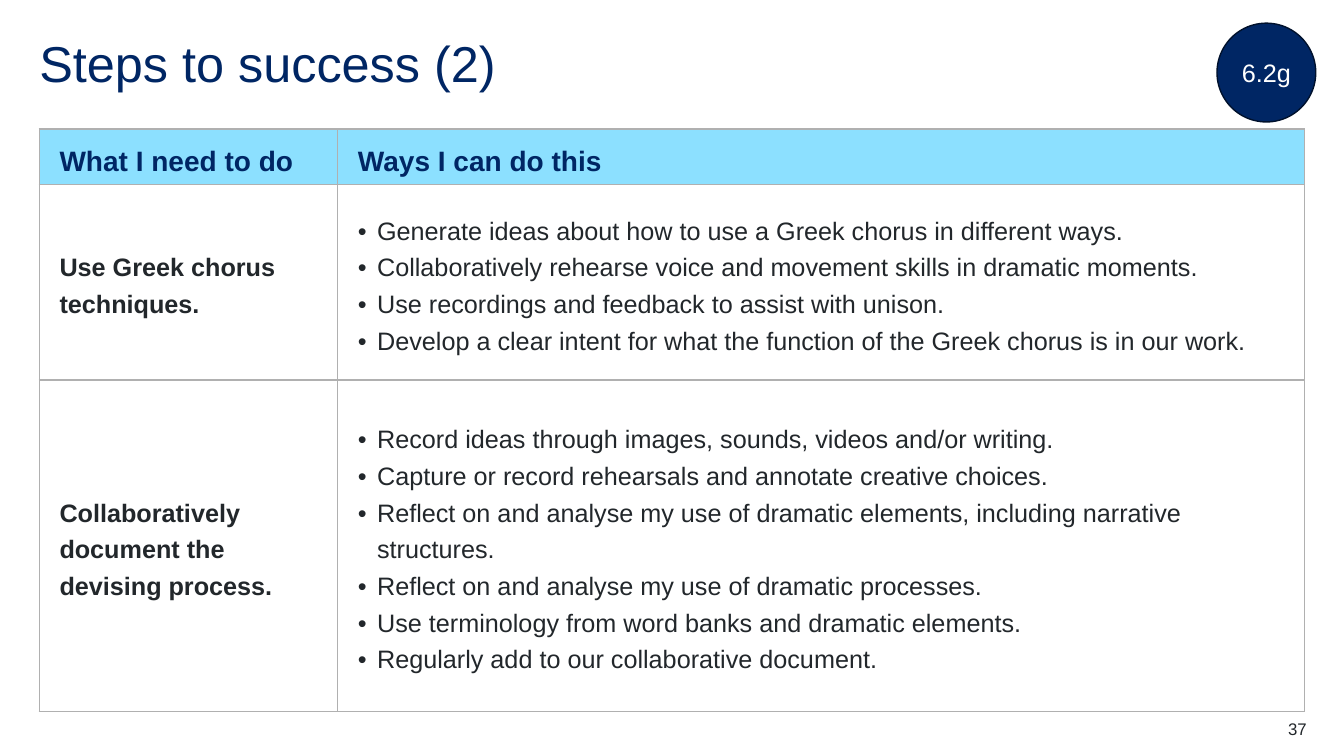
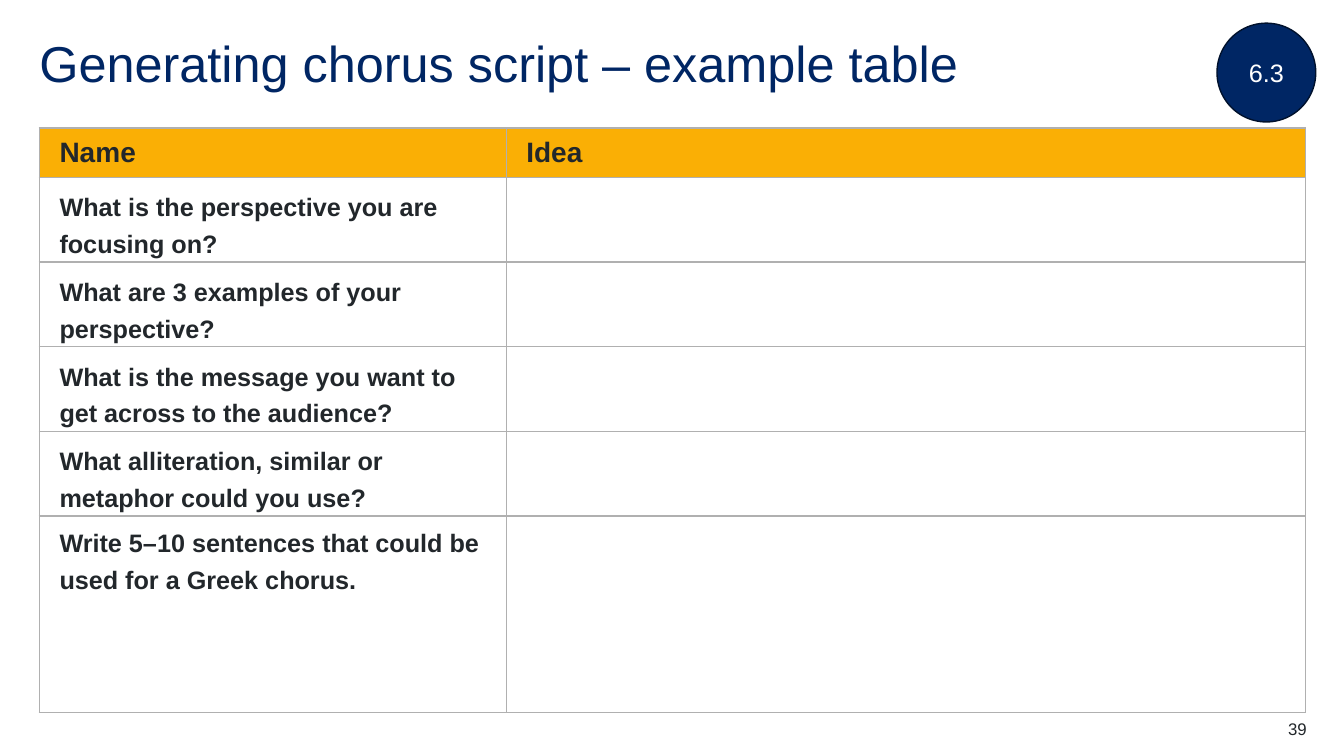
from lxml.etree import SubElement
from pptx import Presentation
from pptx.dml.color import RGBColor
from pptx.enum.shapes import MSO_SHAPE
from pptx.enum.text import MSO_ANCHOR, PP_ALIGN
from pptx.oxml.ns import qn
from pptx.util import Inches, Pt

# Shared style
FONT = "Arial"
NAVY = RGBColor(0x00, 0x26, 0x64)
DARK_NAVY = RGBColor(0x00, 0x11, 0x2C)
INK = RGBColor(0x22, 0x27, 0x2B)
WHITE = RGBColor(0xFF, 0xFF, 0xFF)
SKY = RGBColor(0x8C, 0xE0, 0xFF)
AMBER = RGBColor(0xFA, 0xAF, 0x05)
BORDER = RGBColor(0xB0, 0xB0, 0xB0)
LEFT = 0.39
TITLE_ONLY = 5

# Content
SUCCESS_STEPS = [
    ("Use Greek chorus techniques.", [
        "Generate ideas about how to use a Greek chorus in different ways.",
        "Collaboratively rehearse voice and movement skills in dramatic moments.",
        "Use recordings and feedback to assist with unison.",
        "Develop a clear intent for what the function of the Greek chorus is in our work.",
    ]),
    ("Collaboratively document the devising process.", [
        "Record ideas through images, sounds, videos and/or writing.",
        "Capture or record rehearsals and annotate creative choices.",
        "Reflect on and analyse my use of dramatic elements, including narrative structures.",
        "Reflect on and analyse my use of dramatic processes.",
        "Use terminology from word banks and dramatic elements.",
        "Regularly add to our collaborative document.",
    ]),
]
CHORUS_PROMPTS = [
    "What is the perspective you are focusing on?",
    "What are 3 examples of your perspective?",
    "What is the message you want to get across to the audience?",
    "What alliteration, similar or metaphor could you use?",
    "Write 5–10 sentences that could be used for a Greek chorus.",
]


def add_run(paragraph, text, size, color, bold=False):
    run = paragraph.add_run()
    run.text = text
    run.font.name = FONT
    run.font.size = Pt(size)
    run.font.bold = bold
    run.font.color.rgb = color


def set_insets(frame, left=0, top=0, right=0, bottom=0):
    frame.margin_left, frame.margin_top = Inches(left), Inches(top)
    frame.margin_right, frame.margin_bottom = Inches(right), Inches(bottom)


def add_title(slide, text):
    title = slide.shapes.title
    title.left, title.top = Inches(LEFT), Inches(0.39)
    title.width, title.height = Inches(12.56), Inches(0.6)
    frame = title.text_frame
    set_insets(frame)
    frame.vertical_anchor = MSO_ANCHOR.TOP
    paragraph = frame.paragraphs[0]
    paragraph.alignment = PP_ALIGN.LEFT
    paragraph.line_spacing = 0.9
    add_run(paragraph, text, 36, NAVY)


def add_badge(slide, text):
    badge = slide.shapes.add_shape(
        MSO_SHAPE.OVAL, Inches(12.07), Inches(0.23), Inches(0.98), Inches(0.98))
    badge.shadow.inherit = False
    badge.fill.solid()
    badge.fill.fore_color.rgb = NAVY
    badge.line.color.rgb = DARK_NAVY
    badge.line.width = Pt(1)
    frame = badge.text_frame
    frame.vertical_anchor = MSO_ANCHOR.MIDDLE
    frame.paragraphs[0].alignment = PP_ALIGN.CENTER
    add_run(frame.paragraphs[0], text, 18, WHITE)


def add_page_number(slide, number):
    box = slide.shapes.add_textbox(
        Inches(12.17), Inches(7.13), Inches(0.79), Inches(0.2))
    frame = box.text_frame
    frame.word_wrap = True
    set_insets(frame)
    frame.paragraphs[0].alignment = PP_ALIGN.RIGHT
    add_run(frame.paragraphs[0], str(number), 12, INK)


def add_framed_slide(presentation, title, badge, number):
    slide = presentation.slides.add_slide(presentation.slide_layouts[TITLE_ONLY])
    add_title(slide, title)
    add_badge(slide, badge)
    add_page_number(slide, number)
    return slide


# Tables
def style_cell(cell, fill, insets):
    properties = cell._tc.get_or_add_tcPr()
    for side in ("a:lnL", "a:lnR", "a:lnT", "a:lnB"):
        line = SubElement(properties, qn(side), w=str(Pt(1)))
        solid = SubElement(line, qn("a:solidFill"))
        SubElement(solid, qn("a:srgbClr"), val=str(BORDER))
    cell.fill.solid()
    cell.fill.fore_color.rgb = fill
    cell.vertical_anchor = MSO_ANCHOR.MIDDLE
    set_insets(cell, *insets)


def add_grid(slide, top, widths, heights, header_fill, header_insets, body_insets):
    frame = slide.shapes.add_table(
        len(heights), len(widths), Inches(LEFT), Inches(top),
        Inches(sum(widths)), Inches(sum(heights)))
    table = frame.table
    table.first_row = table.horz_banding = False
    for column, width in zip(table.columns, widths):
        column.width = Inches(width)
    for index, (row, height) in enumerate(zip(table.rows, heights)):
        row.height = Inches(height)
        fill, insets = (WHITE, body_insets) if index else (header_fill, header_insets)
        for cell in row.cells:
            style_cell(cell, fill, insets)
    return table


def fill_header(table, labels, color, line_spacing=None, before=0, after=0):
    for column, label in enumerate(labels):
        paragraph = table.cell(0, column).text_frame.paragraphs[0]
        paragraph.line_spacing = line_spacing
        paragraph.space_before, paragraph.space_after = Pt(before), Pt(after)
        add_run(paragraph, label, 20, color, bold=True)


def fill_label(cell, text):
    paragraph = cell.text_frame.paragraphs[0]
    paragraph.line_spacing = 1.3
    add_run(paragraph, text, 18, INK, bold=True)


def fill_bullets(cell, items):
    frame = cell.text_frame
    for index, item in enumerate(items):
        paragraph = frame.add_paragraph() if index else frame.paragraphs[0]
        paragraph.line_spacing = 1.3
        properties = paragraph._p.get_or_add_pPr()
        properties.set("marL", str(Inches(0.19)))
        properties.set("indent", str(-Inches(0.19)))
        SubElement(properties, qn("a:buFont"), typeface=FONT)
        SubElement(properties, qn("a:buChar"), char="•")
        add_run(paragraph, item, 18, INK)


# Slides
def build_success_steps(presentation):
    slide = add_framed_slide(presentation, "Steps to success (2)", "6.2g", 37)
    # The header's tight bottom inset keeps its row at the set height
    table = add_grid(slide, 1.28, [2.96, 9.59], [0.55, 1.94, 3.29], SKY,
                     header_insets=(0.2, 0.1, 0.1, 0.05),
                     body_insets=(0.2, 0.1, 0.1, 0.1))
    fill_header(table, ["What I need to do", "Ways I can do this"], NAVY,
                line_spacing=1.14, before=6, after=12)
    for row, (goal, ways) in enumerate(SUCCESS_STEPS, start=1):
        fill_label(table.cell(row, 0), goal)
        fill_bullets(table.cell(row, 1), ways)


def build_chorus_table(presentation):
    slide = add_framed_slide(
        presentation, "Generating chorus script – example table", "6.3", 39)
    # No bottom inset in the body, so two lines fit each prompt row
    table = add_grid(slide, 1.27, [4.63, 7.93], [0.49] + [0.84] * 4 + [1.95], AMBER,
                     header_insets=(0.2, 0.05, 0.2, 0.05),
                     body_insets=(0.2, 0.05, 0.2, 0))
    fill_header(table, ["Name", "Idea"], INK)
    for row, prompt in enumerate(CHORUS_PROMPTS, start=1):
        fill_label(table.cell(row, 0), prompt)
    table.cell(len(CHORUS_PROMPTS), 0).vertical_anchor = MSO_ANCHOR.TOP


def main():
    presentation = Presentation()
    presentation.slide_width = Inches(13.33)
    presentation.slide_height = Inches(7.5)
    build_success_steps(presentation)
    build_chorus_table(presentation)
    presentation.save("out.pptx")


if __name__ == "__main__":
    main()
